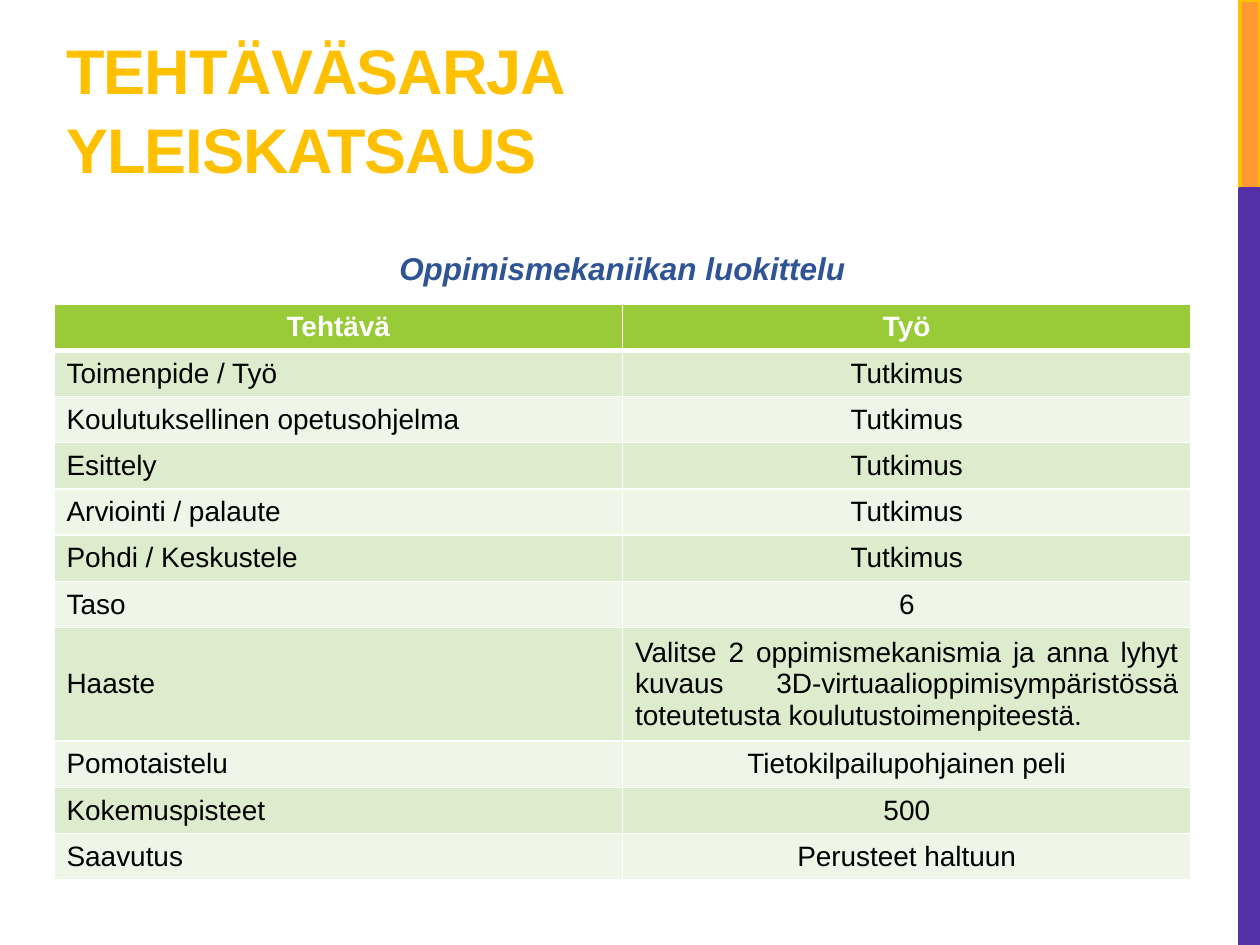
import pptx
import pptx.util
import pptx.dml.color
import pptx.enum.shapes
import pptx.enum.text
import pptx.oxml
import pptx.oxml.ns

RGB = pptx.dml.color.RGBColor
ALIGN = pptx.enum.text.PP_ALIGN
ANCHOR = pptx.enum.text.MSO_ANCHOR

WHITE = RGB(0xFF, 0xFF, 0xFF)
BLACK = RGB(0x00, 0x00, 0x00)
ORANGE = RGB(0xFF, 0x99, 0x33)
AMBER = RGB(0xFF, 0xC0, 0x00)
PURPLE = RGB(0x53, 0x30, 0xA5)
BLUE = RGB(0x2F, 0x54, 0x96)
GREEN = RGB(0x99, 0xCB, 0x38)
BANDS = (RGB(0xEF, 0xF6, 0xE8), RGB(0xDE, 0xEC, 0xCE))

ROW_HEIGHT = 46
TALL_ROW_HEIGHT = 113
CHALLENGE = "Haaste"
ROWS = [
    ("Tehtävä", "Työ"),
    ("Toimenpide / Työ", "Tutkimus"),
    ("Koulutuksellinen opetusohjelma", "Tutkimus"),
    ("Esittely", "Tutkimus"),
    ("Arviointi / palaute", "Tutkimus"),
    ("Pohdi / Keskustele", "Tutkimus"),
    ("Taso", "6"),
    (CHALLENGE, "Valitse 2 oppimismekanismia ja anna lyhyt kuvaus "
     "3D-virtuaalioppimisympäristössä toteutetusta koulutustoimenpiteestä."),
    ("Pomotaistelu", "Tietokilpailupohjainen peli"),
    ("Kokemuspisteet", "500"),
    ("Saavutus", "Perusteet haltuun"),
]


class SlideBuilder:
    """Draws styled elements on the current slide, with lengths in px."""

    font_name = "Arial"
    px_per_inch = 126

    def __init__(self, slide):
        self.slide = slide

    @classmethod
    def emu(cls, px):
        return pptx.util.Emu(round(px * 914400 / cls.px_per_inch))

    def place(self, *lengths):
        return [self.emu(length) for length in lengths]

    def style(self, para, size, color, bold=False, italic=False, align=ALIGN.LEFT):
        para.alignment = align
        font = para.font
        font.name = self.font_name
        font.size = pptx.util.Pt(size)
        font.bold = bold
        font.italic = italic
        font.color.rgb = color

    def bar(self, left, top, width, height, fill, line):
        shape = self.slide.shapes.add_shape(
            pptx.enum.shapes.MSO_SHAPE.RECTANGLE, *self.place(left, top, width, height))
        shape.shadow.inherit = False
        shape.fill.solid()
        shape.fill.fore_color.rgb = fill
        shape.line.color.rgb = line
        shape.line.width = pptx.util.Pt(2.25)

    def text(self, left, top, width, height, words, size, color, anchor=ANCHOR.TOP,
             line_spacing=1.0, space_after=0, letter_spacing=0, **looks):
        box = self.slide.shapes.add_textbox(*self.place(left, top, width, height))
        frame = box.text_frame
        frame.word_wrap = True
        frame.vertical_anchor = anchor
        para = frame.paragraphs[0]
        span = para.add_run()
        span.text = words
        if letter_spacing:
            span.font._element.set("spc", str(round(letter_spacing * 100)))
        para.line_spacing = line_spacing
        para.space_after = pptx.util.Pt(space_after)
        self.style(para, size, color, **looks)
        return frame

    def border(self, cell, side, width):
        properties = cell._tc.get_or_add_tcPr()
        properties.append(pptx.oxml.parse_xml(
            f'<a:{side} {pptx.oxml.ns.nsdecls("a")} w="{pptx.util.Pt(width)}">'
            f'<a:solidFill><a:srgbClr val="{WHITE}"/></a:solidFill></a:{side}>'))

    def cell(self, cell, words, fill, color, bold, align, bottom_width):
        cell.text = words
        cell.vertical_anchor = ANCHOR.MIDDLE
        self.style(cell.text_frame.paragraphs[0], 16, color, bold=bold, align=align)
        for side, width in (("lnL", 1), ("lnR", 1), ("lnT", 1), ("lnB", bottom_width)):
            self.border(cell, side, width)
        cell.fill.solid()
        cell.fill.fore_color.rgb = fill

    def table(self, left, top, width, rows):
        heights = [TALL_ROW_HEIGHT if row[0] == CHALLENGE else ROW_HEIGHT for row in rows]
        table = self.slide.shapes.add_table(
            len(rows), 2, *self.place(left, top, width, sum(heights))).table
        for index, (row, height) in enumerate(zip(rows, heights)):
            table.rows[index].height = self.emu(height)
            header = index == 0
            label_align = ALIGN.CENTER if header else ALIGN.LEFT
            value_align = ALIGN.JUSTIFY if row[0] == CHALLENGE else ALIGN.CENTER
            for column, align in enumerate((label_align, value_align)):
                self.cell(table.cell(index, column), row[column],
                          GREEN if header else BANDS[index % 2],
                          WHITE if header else BLACK, header, align,
                          3 if header or index == 0 else 1)


def main():
    deck = pptx.Presentation()
    deck.slide_width = SlideBuilder.emu(1260)
    deck.slide_height = SlideBuilder.emu(945)
    page = SlideBuilder(deck.slides.add_slide(deck.slide_layouts[6]))
    page.bar(1240, 0, 20, 189, ORANGE, AMBER)
    page.bar(1240, 189, 20, 756, PURPLE, PURPLE)
    title = page.text(54, 0, 798, 189, "TEHTÄVÄSARJA YLEISKATSAUS", 36, AMBER,
                      anchor=ANCHOR.BOTTOM, line_spacing=1.05, letter_spacing=-0.6, bold=True)
    title.margin_bottom = page.emu(3)
    page.text(54, 224, 1137, 64, "Oppimismekaniikan luokittelu", 18, BLUE,
              line_spacing=1.5, space_after=6, bold=True, italic=True, align=ALIGN.CENTER)
    page.table(54, 304, 1137, ROWS)
    deck.save("out.pptx")


if __name__ == "__main__":
    main()
